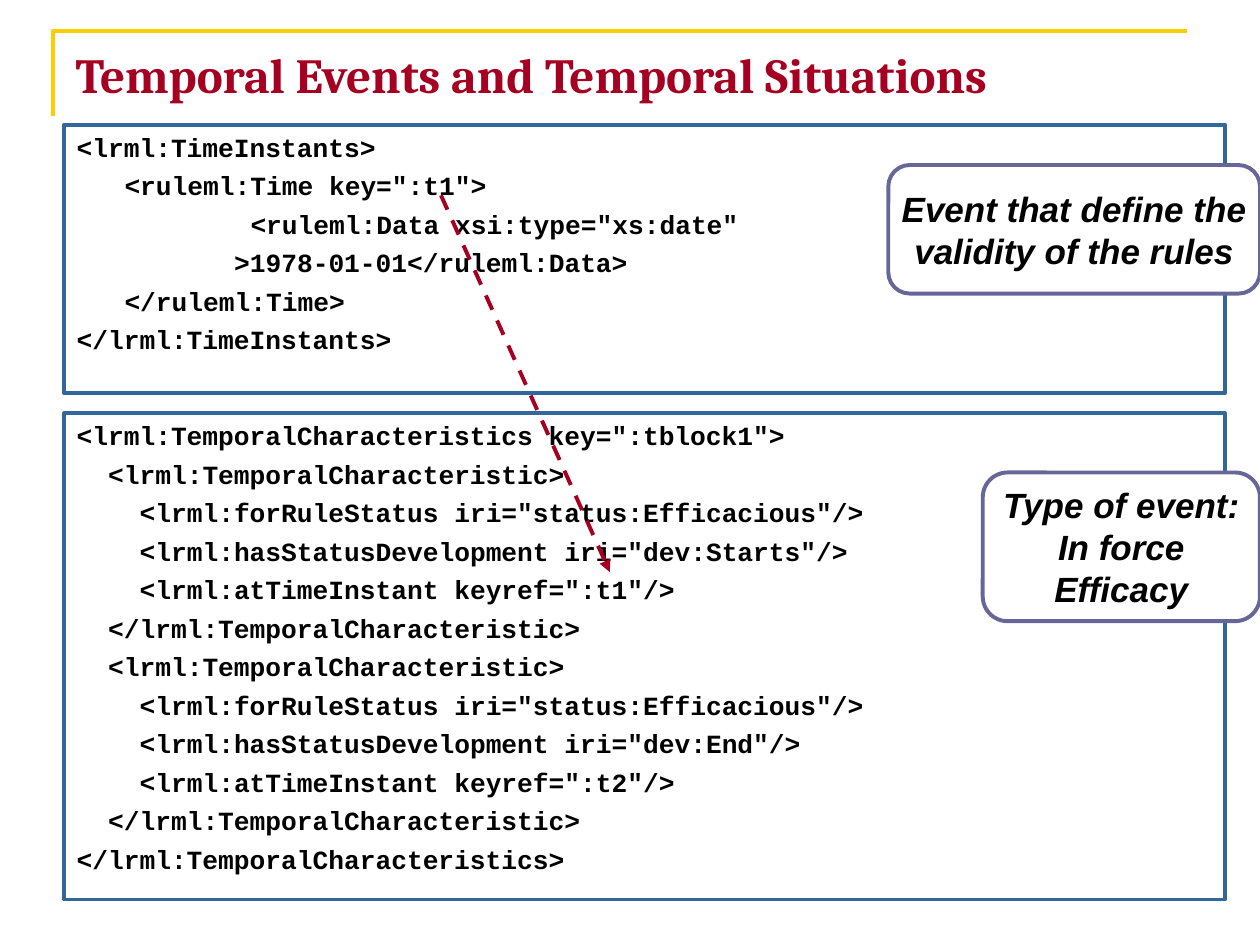
"""Build the slide on temporal events and temporal situations."""
from dataclasses import dataclass

from lxml import etree
from pptx import Presentation
from pptx import util as u
from pptx.dml.color import RGBColor
from pptx.enum import dml, shapes, text
from pptx.oxml import ns

COLORS = {"title": "A50021", "frame": "FFCC00", "code": "336699",
          "callout": "666699", "text": "000000", "white": "FFFFFF"}
LINE_WIDTH = u.Pt(2.25)
TITLE_FONT = {"name": "Cambria", "size": u.Pt(28), "bold": True}
CODE_FONT = {"name": "Courier New", "size": u.Pt(15), "bold": True}
CALLOUT_FONT = {"name": "Arial", "size": u.Pt(20), "bold": True, "italic": True}
CODE_FRAME = {"vertical_anchor": text.MSO_ANCHOR.TOP, "word_wrap": True}
CALLOUT_FRAME = {"vertical_anchor": text.MSO_ANCHOR.MIDDLE, "word_wrap": False}
CODE_PARA = {"alignment": text.PP_ALIGN.LEFT, "space_before": u.Pt(4)}
CALLOUT_PARA = {"alignment": text.PP_ALIGN.CENTER}


@dataclass
class Box:
    left: float
    top: float
    width: float
    height: float

    def lengths(self) -> list:
        return [u.Inches(v) for v in (self.left, self.top, self.width, self.height)]


@dataclass
class CodeBlock:
    box: Box
    lines: list[tuple[float, str]]


@dataclass
class Callout:
    box: Box
    lines: list[str]


def characteristic(event: str, instant: str) -> list[tuple[float, str]]:
    return [
        (0.25, "<lrml:TemporalCharacteristic>"),
        (0.5, '<lrml:forRuleStatus iri="status:Efficacious"/>'),
        (0.5, f'<lrml:hasStatusDevelopment iri="dev:{event}"/>'),
        (0.5, f'<lrml:atTimeInstant keyref=":{instant}"/>'),
        (0.25, "</lrml:TemporalCharacteristic>"),
    ]


CODE_BLOCKS = [
    CodeBlock(Box(0.51, 0.99, 9.21, 2.13), [
        (0, "<lrml:TimeInstants>"),
        (0.38, '<ruleml:Time key=":t1">'),
        (1.38, '<ruleml:Data xsi:type="xs:date"'),
        (1.25, ">1978-01-01</ruleml:Data>"),
        (0.38, "</ruleml:Time>"),
        (0, "</lrml:TimeInstants>"),
    ]),
    CodeBlock(Box(0.51, 3.28, 9.21, 3.86), [
        (0, '<lrml:TemporalCharacteristics key=":tblock1">'),
        *characteristic("Starts", "t1"),
        *characteristic("End", "t2"),
        (0, "</lrml:TemporalCharacteristics>"),
    ]),
]
CALLOUTS = [
    Callout(Box(7.8, 3.75, 2.2, 1.18), ["Type of event:", "In force", "Efficacy"]),
    Callout(Box(7.05, 1.31, 2.95, 1.02),
            ["Event that define the", "validity of the rules"]),
]


def rgb(key: str) -> RGBColor:
    return RGBColor.from_string(COLORS[key])


def apply(target, values: dict) -> None:
    for name, value in values.items():
        setattr(target, name, value)


def style_line(sp, color: str) -> None:
    sp.line.color.rgb = rgb(color)
    sp.line.width = LINE_WIDTH


def write_line(p, line: str, font: dict, color: str) -> None:
    r = p.add_run()
    r.text = line
    apply(r.font, font)
    r.font.color.rgb = rgb(color)


def write_lines(tf, lines: list[tuple[float, str]], font: dict, para: dict) -> None:
    for i, (indent, line) in enumerate(lines):
        p = tf.add_paragraph() if i else tf.paragraphs[0]
        apply(p, para)
        if indent:
            p._p.get_or_add_pPr().set("marL", str(u.Inches(indent)))
        write_line(p, line, font, "text")


def add_title(s, title: str) -> None:
    sp = s.shapes.title
    sp.left, sp.top, sp.width, sp.height = Box(0.5, 0.3, 9, 1.25).lengths()
    tf = sp.text_frame
    apply(tf, CODE_FRAME)
    p = tf.paragraphs[0]
    p.alignment = text.PP_ALIGN.LEFT
    write_line(p, title, TITLE_FONT, "title")


def add_frame(s) -> None:
    builder = s.shapes.build_freeform(u.Inches(0.42), u.Inches(0.92))
    builder.add_line_segments(
        [(u.Inches(x), u.Inches(0.25)) for x in (0.42, 9.42)], close=False)
    sp = builder.convert_to_shape()
    sp.shadow.inherit = False
    sp.fill.background()
    style_line(sp, "frame")


def add_code(s, block: CodeBlock) -> None:
    sp = s.shapes.add_shape(shapes.MSO_SHAPE.RECTANGLE, *block.box.lengths())
    sp.shadow.inherit = False
    sp.fill.background()
    style_line(sp, "code")
    apply(sp.text_frame, CODE_FRAME)
    write_lines(sp.text_frame, block.lines, CODE_FONT, CODE_PARA)


def add_arrow(s, start: tuple[float, float], end: tuple[float, float]) -> None:
    sp = s.shapes.add_connector(
        shapes.MSO_CONNECTOR.STRAIGHT, *[u.Inches(v) for v in (*start, *end)])
    style_line(sp, "title")
    sp.line.dash_style = dml.MSO_LINE.DASH
    etree.SubElement(sp.line._get_or_add_ln(), ns.qn("a:tailEnd"), type="triangle")
    etree.SubElement(sp._element.spPr, ns.qn("a:effectLst"))


def add_callout(s, callout: Callout) -> None:
    sp = s.shapes.add_shape(
        shapes.MSO_SHAPE.ROUNDED_RECTANGLE, *callout.box.lengths())
    sp.shadow.inherit = False
    sp.fill.solid()
    sp.fill.fore_color.rgb = rgb("white")
    style_line(sp, "callout")
    apply(sp.text_frame, CALLOUT_FRAME)
    write_lines(sp.text_frame, [(0, line) for line in callout.lines],
                CALLOUT_FONT, CALLOUT_PARA)


def main() -> None:
    prs = Presentation()
    prs.slide_width, prs.slide_height = u.Inches(10), u.Inches(7.5)
    s = prs.slides.add_slide(prs.slide_layouts[5])
    add_frame(s)
    add_title(s, "Temporal Events and Temporal Situations")
    for block in CODE_BLOCKS:
        add_code(s, block)
    add_arrow(s, (3.5, 1.55), (4.84, 4.54))
    for callout in CALLOUTS:
        add_callout(s, callout)
    prs.save("out.pptx")


if __name__ == "__main__":
    main()
